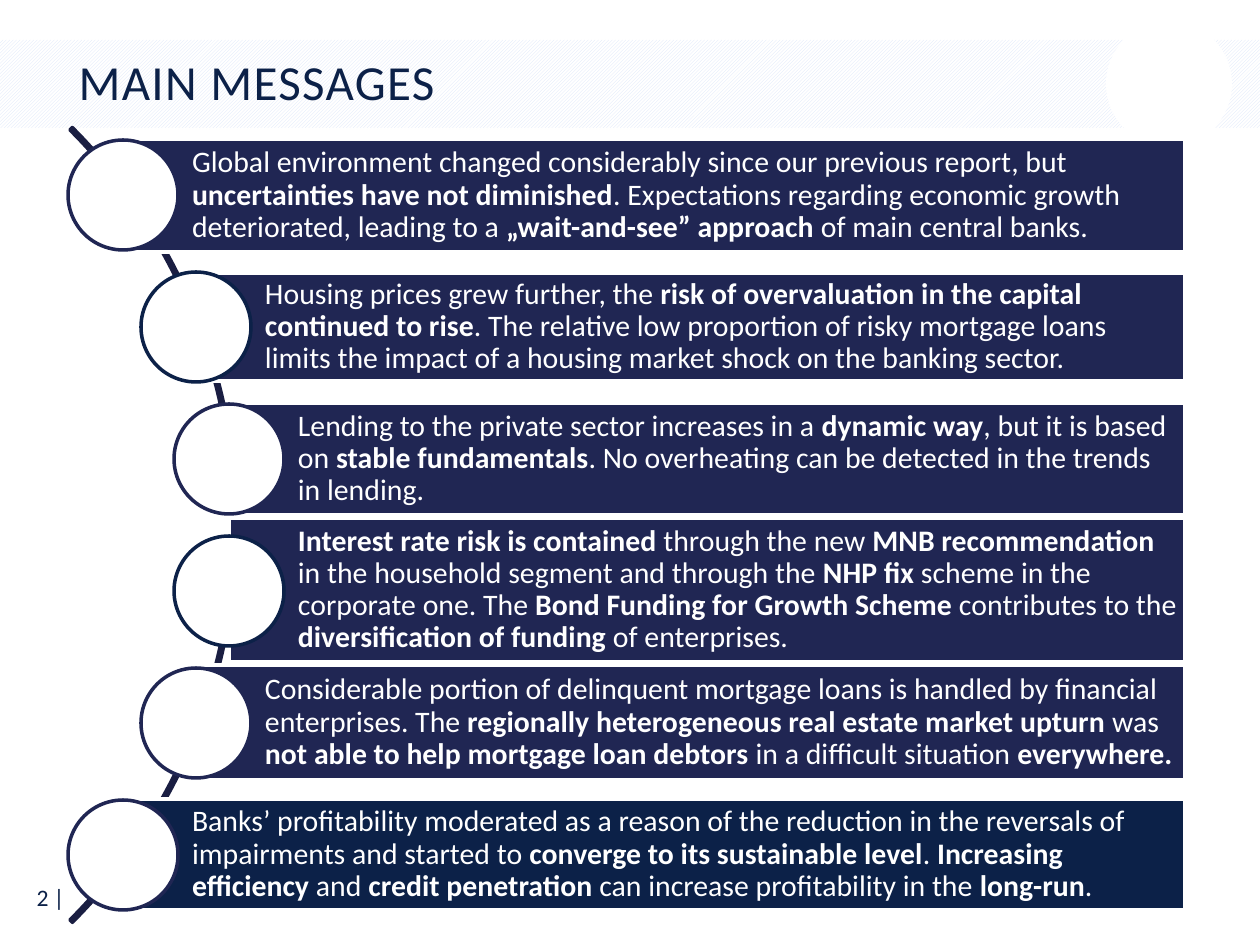
from pptx import Presentation
from pptx import util as u
from pptx.dml.color import RGBColor
from pptx.enum import dml, shapes, text

SCALE = 914400 / 126  # EMU in one px
NAVY, INDIGO, ARC, WHITE = "0C2148", "202653", "1A1E42", "FFFFFF"
CIRCLE, CIRCLE_TOP, PITCH = 110, 140, 132
BAR_RIGHT = 1185

# circle left, circle outline, bar top, bar height, bar colour, message (** switches bold)
MESSAGES = [
    (68, INDIGO, 139, 113, INDIGO,
     "Global environment changed considerably since our previous report, but "
     "**uncertainties have not diminished**. Expectations regarding economic growth "
     "deteriorated, leading to a **„wait-and-see” approach **of main central banks."),
    (141, NAVY, 273, 108, INDIGO,
     "Housing prices grew further, the **risk of overvaluation in the capital continued "
     "to rise**. The relative low proportion of risky mortgage loans limits the impact of "
     "a housing market shock on the banking sector."),
    (174, INDIGO, 403, 112, INDIGO,
     "Lending to the private sector increases in a **dynamic way**, but it is based on "
     "**stable fundamentals**. No overheating can be detected in the trends in lending."),
    (174, NAVY, 518, 144, INDIGO,
     "**Interest rate risk is contained **through the new **MNB recommendation **in the "
     "household segment and through the **NHP fix **scheme in the corporate one. The "
     "**Bond Funding for Growth Scheme** contributes to the **diversification of funding "
     "**of enterprises."),
    (141, INDIGO, 665, 115, INDIGO,
     "Considerable portion of delinquent mortgage loans is handled by financial "
     "enterprises. The **regionally heterogeneous real estate market upturn **was **not "
     "able to help mortgage loan debtors** in a difficult situation **everywhere."),
    (68, INDIGO, 799, 111, NAVY,
     "Banks’ profitability moderated as a reason of the reduction in the reversals of "
     "impairments and started to **converge to its sustainable level**. **Increasing "
     "efficiency **and **credit penetration** can increase profitability in the "
     "**long-run**."),
]


def px(length):
    return u.Emu(round(length * SCALE))


def color(value):
    return RGBColor.from_string(value)


class Deck:
    def __init__(self, width, height):
        self.presentation = Presentation()
        self.presentation.slide_width = px(width)
        self.presentation.slide_height = px(height)
        self.slide = None

    def add_slide(self):
        self.slide = self.presentation.slides.add_slide(self.presentation.slide_layouts[5])

    def font(self, paragraph, size, hue):
        paragraph.font.name = "Calibri"
        paragraph.font.size = u.Pt(size)
        paragraph.font.color.rgb = color(hue)

    def title(self, wording, left, top, width, height):
        """Format the title placeholder and bring it in front of the banner."""
        title = self.slide.shapes.title
        title.left, title.top, title.width, title.height = map(px, (left, top, width, height))
        frame = title.text_frame
        frame.text = wording
        frame.auto_size = text.MSO_AUTO_SIZE.NONE
        frame.vertical_anchor = text.MSO_ANCHOR.MIDDLE
        paragraph = frame.paragraphs[0]
        paragraph.alignment = text.PP_ALIGN.LEFT
        paragraph.line_spacing = 0.9
        self.font(paragraph, 28, NAVY)
        paragraph.runs[0].font._element.set("spc", "80")
        self.slide.shapes._spTree.append(title._element)

    def shape(self, kind, left, top, width, height, fill=None, line=None):
        shape = self.slide.shapes.add_shape(kind, *map(px, (left, top, width, height)))
        shape.shadow.inherit = False
        if fill:
            shape.fill.solid()
            shape.fill.fore_color.rgb = color(fill)
        else:
            shape.fill.background()
        if line:
            shape.line.color.rgb = color(line)
            shape.line.width = u.Pt(2)
        else:
            shape.line.fill.background()
        return shape

    def banner(self, left, top, width, height):
        fill = self.shape(shapes.MSO_SHAPE.RECTANGLE, left, top, width, height).fill
        fill.patterned()
        fill.pattern = dml.MSO_PATTERN.LIGHT_UPWARD_DIAGONAL
        fill.fore_color.rgb = color("DAE5F9")
        fill.back_color.rgb = color(WHITE)

    def circle(self, left, top, size, line=None):
        self.shape(shapes.MSO_SHAPE.OVAL, left, top, size, size, WHITE, line)

    def arc(self, left, top, size):
        arc = self.shape(shapes.MSO_SHAPE.BLOCK_ARC, left, top, size, size, line=ARC)
        for index, value in enumerate((189, 27, 0.003)):
            arc.adjustments[index] = value

    def bar(self, left, top, width, height, fill, message):
        bar = self.shape(shapes.MSO_SHAPE.RECTANGLE, left, top, width, height, fill, WHITE)
        frame = bar.text_frame
        frame.word_wrap = True
        frame.vertical_anchor = text.MSO_ANCHOR.MIDDLE
        frame.margin_left = px(69)
        frame.margin_top = frame.margin_right = frame.margin_bottom = px(6)
        paragraph = frame.paragraphs[0]
        paragraph.alignment = text.PP_ALIGN.LEFT
        paragraph.line_spacing = 0.9
        self.font(paragraph, 17, WHITE)
        for index, part in enumerate(message.split("**")):
            if part:
                run = paragraph.add_run()
                run.text = part
                run.font.bold = index % 2 == 1

    def page_number(self, wording, left, top, width, height):
        box = self.slide.shapes.add_textbox(*map(px, (left, top, width, height)))
        frame = box.text_frame
        frame.word_wrap = True
        frame.vertical_anchor = text.MSO_ANCHOR.MIDDLE
        paragraph = frame.paragraphs[0]
        paragraph.text = wording
        paragraph.alignment = text.PP_ALIGN.RIGHT
        self.font(paragraph, 13.5, NAVY)


def main():
    deck = Deck(1260, 945)
    deck.add_slide()
    deck.page_number("2 |", 1, 874, 76, 47)
    deck.banner(0, 40, 1260, 88)
    deck.circle(1106, 21, 126)
    deck.title("MAIN MESSAGES", 66, 43, 1048, 84)
    deck.arc(-887, -37, 1124)
    for row, (left, outline, top, height, fill, message) in enumerate(MESSAGES):
        bar_left = left + CIRCLE // 2
        deck.bar(bar_left, top, BAR_RIGHT - bar_left, height, fill, message)
        deck.circle(left, CIRCLE_TOP + row * PITCH, CIRCLE, outline)
    deck.presentation.save("out.pptx")


if __name__ == "__main__":
    main()
